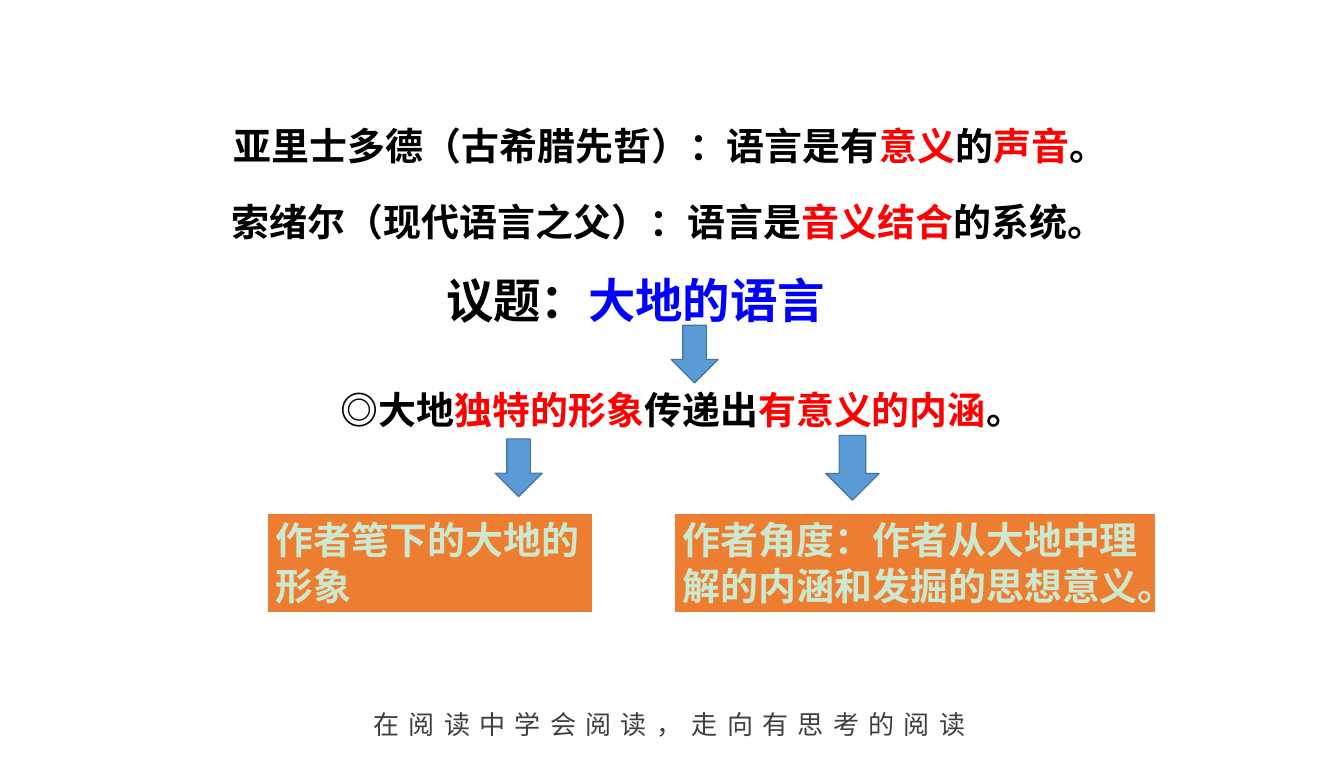
import pptx
import pptx.dml.color
import pptx.enum.shapes
import pptx.enum.text
import pptx.oxml
import pptx.oxml.ns
import pptx.util

PX = 9525
FONT = "Noto Sans CJK SC"
BLACK, RED, BLUE, GREEN = "000000", "FF0000", "0000FF", "CCE8CF"
LEFT = pptx.enum.text.PP_ALIGN.LEFT
CENTER = pptx.enum.text.PP_ALIGN.CENTER


def color(value):
    return pptx.dml.color.RGBColor.from_string(value)


def px(*lengths):
    return [pptx.util.Emu(length * PX) for length in lengths]


def place(shape, box):
    shape.left, shape.top, shape.width, shape.height = px(*box)


def write(shape, runs, size=32, bold=True, align=LEFT, spacing=None, margins=(10, 5)):
    """Fill a shape with one paragraph of (text, color) runs."""
    frame = shape.text_frame
    frame.word_wrap = True
    frame.auto_size = pptx.enum.text.MSO_AUTO_SIZE.NONE
    frame.vertical_anchor = pptx.enum.text.MSO_ANCHOR.TOP
    frame.margin_left = frame.margin_right = px(margins[0])[0]
    frame.margin_top = frame.margin_bottom = px(margins[1])[0]
    paragraph = frame.paragraphs[0]
    paragraph.alignment = align
    paragraph.line_spacing = 1.0
    paragraph.space_before = pptx.util.Pt(0)
    for text, text_color in runs:
        run = paragraph.add_run()
        run.text = text
        run.font.size = pptx.util.Pt(size)
        run.font.bold = bold
        run.font.color.rgb = color(text_color)
        run.font.name = FONT
        properties = run.font._element
        east_asian = pptx.oxml.parse_xml(
            f'<a:ea {pptx.oxml.ns.nsdecls("a")} typeface="{FONT}"/>')
        properties.find(pptx.oxml.ns.qn("a:latin")).addnext(east_asian)
        if spacing:
            properties.set("spc", str(spacing))


def add_text(slide, box, runs, **text_format):
    write(slide.shapes.add_textbox(*px(*box)), runs, **text_format)


def add_block(slide, kind, box, fill, line, line_width):
    shape = slide.shapes.add_shape(kind, *px(*box))
    shape.shadow.inherit = False
    shape.fill.solid()
    shape.fill.fore_color.rgb = color(fill)
    shape.line.color.rgb = color(line)
    shape.line.width = pptx.util.Pt(line_width)
    return shape


def add_arrow(slide, box):
    add_block(slide, pptx.enum.shapes.MSO_SHAPE.DOWN_ARROW, box, "5B9BD5", "43739E", 1)


def add_answer(slide, box, text):
    shape = add_block(slide, pptx.enum.shapes.MSO_SHAPE.RECTANGLE, box, "ED7D31", "FFFFFF", 1.5)
    write(shape, [(text, GREEN)])


def add_quotes(slide, box):
    left, top, width, height = box
    add_text(slide, (left, top, width, height), [
        ("亚里士多德（古希腊先哲）：语言是有", BLACK), ("意义", RED), ("的", BLACK),
        ("声音", RED), ("。", BLACK)])
    add_text(slide, (left - 2, top + 85, width, height), [
        ("索绪尔（现代语言之父）：语言是", BLACK), ("音义结合", RED), ("的系统。", BLACK)])


def add_topic(slide, box):
    left, top, width, height = box
    place(slide.shapes.title, box)
    write(slide.shapes.title, [("议题：", BLACK), ("大地的语言", BLUE)], size=40, align=CENTER)
    add_arrow(slide, (left + 494, top + 66, 53, 65))


def add_claim(slide, box):
    left, top, width, height = box
    add_text(slide, box, [
        ("◎大地", BLACK), ("独特的形象", RED), ("传递出", BLACK),
        ("有意义的内涵", RED), ("。", BLACK)], align=CENTER)
    add_arrow(slide, (left + 453, top + 64, 53, 65))
    add_arrow(slide, (left + 825, top + 60, 60, 73))


def add_answers(slide, box):
    left, top, width, height = box
    add_answer(slide, (left, top, 367, height), "作者笔下的大地的形象")
    add_answer(slide, (left + width - 542, top, 542, height),
               "作者角度：作者从大地中理解的内涵和发掘的思想意义。")


def add_motto(slide, box):
    add_text(slide, box, [("在阅读中学会阅读，走向有思考的阅读", "404040")],
             size=22, bold=False, spacing=790, margins=(15, 8))


def main():
    presentation = pptx.Presentation()
    presentation.slide_width, presentation.slide_height = px(1512, 870)
    slide = presentation.slides.add_slide(presentation.slide_layouts[5])
    slide.background.fill.solid()
    slide.background.fill.fore_color.rgb = color("FFFFFF")
    add_motto(slide, (405, 789, 754, 51))
    add_quotes(slide, (253, 133, 1663, 61))
    add_topic(slide, (261, 300, 908, 74))
    add_claim(slide, (104, 430, 1327, 61))
    add_answers(slide, (300, 577, 1000, 113))
    presentation.save("out.pptx")


if __name__ == "__main__":
    main()
